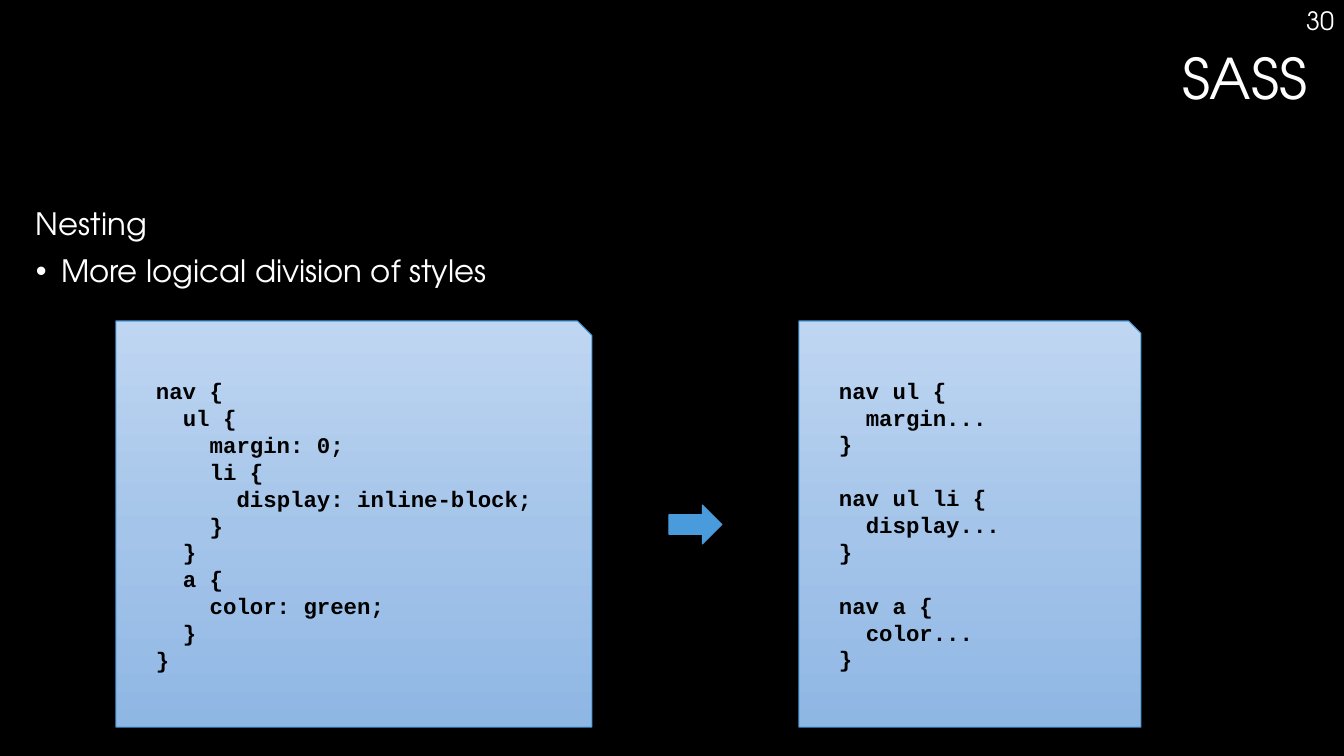
import copy

import pptx
import pptx.dml.color
import pptx.enum.shapes
import pptx.enum.text
import pptx.oxml
import pptx.util

SHAPE = pptx.enum.shapes.MSO_SHAPE
ALIGN = pptx.enum.text.PP_ALIGN
ANCHOR = pptx.enum.text.MSO_ANCHOR

SIZE = (1344, 756)
SCALE = 12192000 / SIZE[0]
COLORS = {"back": "000000", "text": "FFFFFF", "code": "000000", "blue": "4A9BDC"}
FADE = [(0, "BFD6F2"), (0.52, "A4C4E9"), (1, "8FB7E4")]
SANS, MONO = "TeX Gyre Adventor", "Courier New"

TITLE = "SASS"
NUMBER = "30"
HEAD = "Nesting"
POINT = "More logical division of styles"

# Code lines as (depth, text); each inner list is one rule.
NESTED = [[
    (0, "nav {"), (1, "ul {"), (2, "margin: 0;"), (2, "li {"),
    (3, "display: inline-block;"), (2, "}"), (1, "}"), (1, "a {"),
    (2, "color: green;"), (1, "}"), (0, "}"),
]]
FLAT = [
    [(0, "nav ul {"), (1, "margin..."), (0, "}")],
    [(0, "nav ul li {"), (1, "display..."), (0, "}")],
    [(0, "nav a {"), (1, "color..."), (0, "}")],
]
CARDS = [(116, 476, NESTED), (799, 342, FLAT)]  # left, width, code
CARD_TOP, CARD_HIGH = 321, 406
ARROW = (669, 505, 53, 39)
CODE_SIZE = 16
STEP = 2 * 0.6 * CODE_SIZE  # two monospaced characters, in points
GAP = 19.2  # one line of code, in points


def px(n):
    return pptx.util.Emu(round(n * SCALE))


def rgb(code):
    return pptx.dml.color.RGBColor.from_string(code)


def write(frame, text, size, font=SANS, color=COLORS["text"], bold=False,
          align=ALIGN.LEFT, line=None, before=0, left=0, bullet=None):
    """Fill the empty first paragraph, or add another one."""
    para = frame.paragraphs[0]
    if para.runs:
        para = frame.add_paragraph()
    para.alignment = align
    para.line_spacing = line
    para.space_before = pptx.util.Pt(before)
    props = para._p.get_or_add_pPr()
    props.set("marL", str(pptx.util.Pt(left)))
    props.set("indent", str(-pptx.util.Pt(left) if bullet else 0))
    if bullet:
        font_mark = pptx.oxml.parse_xml(
            '<a:buFont xmlns:a="http://schemas.openxmlformats.org/drawingml/2006/main"'
            ' typeface="Arial"/>')
        mark = pptx.oxml.parse_xml(
            '<a:buChar xmlns:a="http://schemas.openxmlformats.org/drawingml/2006/main"'
            f' char="{bullet}"/>')
        props.extend([font_mark, mark])
    run = para.add_run()
    run.text = text
    run.font.name = font
    run.font.size = pptx.util.Pt(size)
    run.font.bold = bold
    run.font.color.rgb = rgb(color)


def text_box(slide, *box):
    frame = slide.shapes.add_textbox(*map(px, box)).text_frame
    frame.word_wrap = True
    return frame


def add_shape(slide, kind, *box):
    shape = slide.shapes.add_shape(kind, *map(px, box))
    shape.shadow.inherit = False
    shape.line.color.rgb = rgb(COLORS["blue"])
    shape.line.width = pptx.util.Pt(0.75)
    return shape


def fade(shape):
    shape.fill.gradient()
    shape.fill.gradient_angle = 270
    stops = shape._element.xpath(".//a:gsLst")[0]
    stops.insert(1, copy.deepcopy(stops[0]))
    for stop, (place, color) in zip(shape.fill.gradient_stops, FADE):
        stop.position = place
        stop.color.rgb = rgb(color)


def add_card(slide, left, width, rules):
    card = add_shape(slide, SHAPE.SNIP_1_RECTANGLE, left, CARD_TOP, width, CARD_HIGH)
    card.adjustments[0] = 0.036
    fade(card)
    frame = card.text_frame
    frame.word_wrap = True
    frame.vertical_anchor = ANCHOR.MIDDLE
    frame.margin_left, frame.margin_right = px(40), px(10)
    frame.margin_top, frame.margin_bottom = 0, px(5)
    for i, rule in enumerate(rules):
        for j, (depth, text) in enumerate(rule):
            write(frame, text, CODE_SIZE, font=MONO, color=COLORS["code"], bold=True,
                  left=depth * STEP, before=GAP if i and not j else 0)


def main():
    deck = pptx.Presentation()
    deck.slide_width, deck.slide_height = map(px, SIZE)
    slide = deck.slides.add_slide(deck.slide_layouts[6])
    slide.background.fill.solid()
    slide.background.fill.fore_color.rgb = rgb(COLORS["back"])

    body = text_box(slide, 26, 204, 1291, 103)
    write(body, HEAD, 22, line=0.9, before=10)
    write(body, POINT, 22, line=0.9, before=10, left=18, bullet="•")
    write(text_box(slide, 26, 46, 1291, 142), TITLE, 40, align=ALIGN.RIGHT, line=0.9)
    write(text_box(slide, 1054, 0, 290, 40), NUMBER, 18, align=ALIGN.RIGHT)

    for card in CARDS:
        add_card(slide, *card)
    arrow = add_shape(slide, SHAPE.RIGHT_ARROW, *ARROW)
    arrow.fill.solid()
    arrow.fill.fore_color.rgb = rgb(COLORS["blue"])
    deck.save("out.pptx")


if __name__ == "__main__":
    main()
